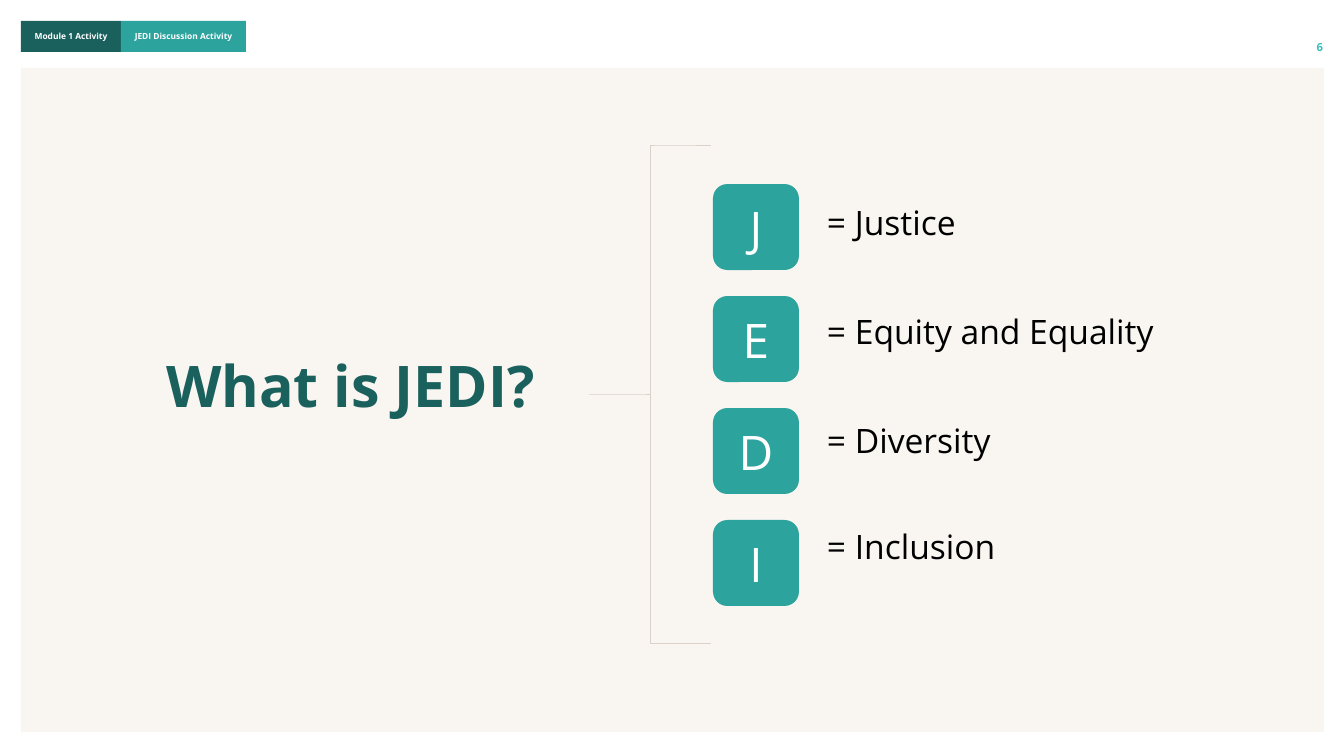
from dataclasses import dataclass

from pptx import Presentation
from pptx.dml.color import RGBColor
from pptx.enum.shapes import MSO_SHAPE
from pptx.enum.text import MSO_ANCHOR, PP_ALIGN
from pptx.util import Emu, Pt

RECT, ROUNDED = MSO_SHAPE.RECTANGLE, MSO_SHAPE.ROUNDED_RECTANGLE
SNIPPED, BRACE = MSO_SHAPE.SNIP_1_RECTANGLE, MSO_SHAPE.LEFT_BRACE
LEFT, CENTER, RIGHT = PP_ALIGN.LEFT, PP_ALIGN.CENTER, PP_ALIGN.RIGHT
TOP, MIDDLE, BOTTOM = MSO_ANCHOR.TOP, MSO_ANCHOR.MIDDLE, MSO_ANCHOR.BOTTOM

FONT = "Open Sans"
DARK_TEAL, TEAL, LIGHT_TEAL = "1A605D", "2DA39D", "35BFB9"
CREAM, SAND, WHITE, BLACK = "F9F5F1", "DAD2C9", "FFFFFF", "000000"

EMU_PER_PX = 914400 / 100.8
TILE_LEFT, TILE_TOP, TILE_SIZE, TILE_GAP = 713, 184, 86, 26


@dataclass
class Box:
    left: int
    top: int
    width: int
    height: int


@dataclass
class Tab:
    text: str
    left: int
    width: int
    color: str


@dataclass
class Term:
    letter: str
    meaning: str
    space_before: int


TABS = [
    Tab("Module 1 Activity", 21, 100, DARK_TEAL),
    Tab("JEDI Discussion Activity", 121, 125, TEAL),
]
TERMS = [
    Term("J", "Justice", 0),
    Term("E", "Equity and Equality", 52),
    Term("D", "Diversity", 52),
    Term("I", "Inclusion", 50),
]


def px(n: float) -> Emu:
    return Emu(round(n * EMU_PER_PX))


def rgb(color: str) -> RGBColor:
    return RGBColor.from_string(color)


def place(box: Box) -> tuple[Emu, Emu, Emu, Emu]:
    return px(box.left), px(box.top), px(box.width), px(box.height)


def add_shape(slide, kind, box: Box, fill: str):
    s = slide.shapes.add_shape(kind, *place(box))
    s.shadow.inherit = False
    s.fill.solid()
    s.fill.fore_color.rgb = rgb(fill)
    s.line.fill.background()
    return s


def add_text(slide, box: Box):
    s = slide.shapes.add_textbox(*place(box))
    return s


def write(s, text: str, size: int, color: str, align=LEFT, anchor=TOP,
          bold: bool = False, side: int = 10, spacing: float = 1.0) -> None:
    """Fill a shape with text, one paragraph per line, inset at the sides only."""
    tf = s.text_frame
    tf.text = text
    tf.word_wrap = True
    tf.vertical_anchor = anchor
    tf.margin_left = px(side)
    tf.margin_right = tf.margin_top = tf.margin_bottom = 0
    if align == CENTER:
        tf.margin_right = px(side)
    for p in tf.paragraphs:
        p.alignment = align
        p.line_spacing = spacing
        for r in p.runs:
            r.font.name = FONT
            r.font.size = Pt(size)
            r.font.bold = bold
            r.font.color.rgb = rgb(color)


def add_header(slide) -> None:
    for tab in TABS:
        s = add_shape(slide, RECT, Box(tab.left, 21, tab.width, 31), tab.color)
        write(s, tab.text, 6, WHITE, CENTER, MIDDLE, bold=True, side=0)
    number = add_text(slide, Box(1235, 21, 88, 33))
    write(number, "6", 8, LIGHT_TEAL, RIGHT, BOTTOM, bold=True)


def add_terms(slide) -> None:
    meanings = add_text(slide, Box(817, 206, 389, 355))
    write(meanings, "\n".join(f"= {t.meaning}" for t in TERMS), 24, BLACK, spacing=0.9)
    for i, (term, p) in enumerate(zip(TERMS, meanings.text_frame.paragraphs)):
        p.space_before = Pt(term.space_before)
        top = TILE_TOP + i * (TILE_SIZE + TILE_GAP)
        tile = add_shape(slide, ROUNDED, Box(TILE_LEFT, top, TILE_SIZE, TILE_SIZE), TEAL)
        write(tile, term.letter, 34, WHITE, CENTER, MIDDLE)


def add_brace(slide) -> None:
    s = slide.shapes.add_shape(BRACE, *place(Box(589, 145, 122, 498)))
    s.shadow.inherit = False
    s.adjustments[0] = 0
    s.adjustments[1] = 0.5
    s.fill.background()
    s.line.color.rgb = rgb(SAND)
    s.line.width = Pt(0.5)


def main() -> None:
    prs = Presentation()
    prs.slide_width, prs.slide_height = px(1344), px(756)
    slide = prs.slides.add_slide(prs.slide_layouts[6])

    panel = add_shape(slide, SNIPPED, Box(21, 68, 1303, 664), CREAM)
    panel.adjustments[0] = 0
    add_header(slide)
    title = add_text(slide, Box(156, 358, 435, 135))
    write(title, "What is JEDI?", 41, DARK_TEAL, bold=True, spacing=0.9)
    add_terms(slide)
    add_brace(slide)

    prs.save("out.pptx")


if __name__ == "__main__":
    main()
